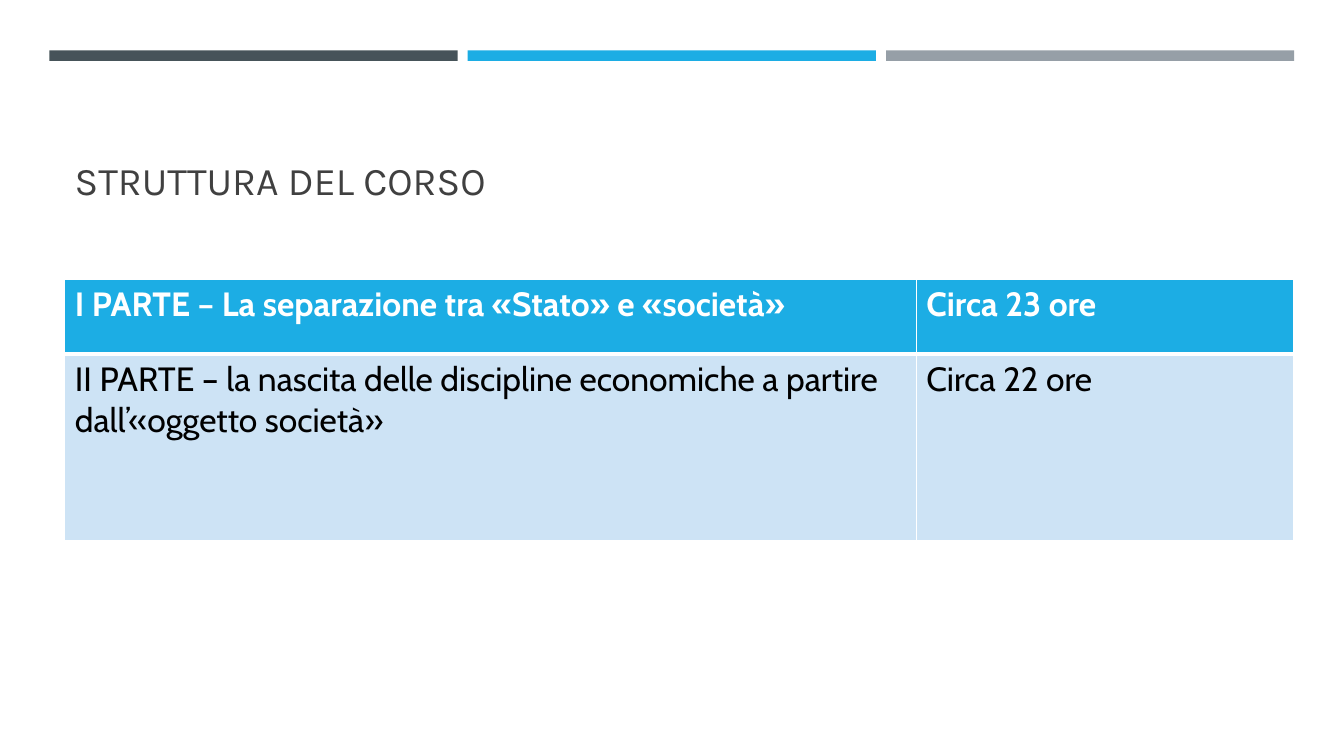
from dataclasses import dataclass

from lxml.etree import SubElement
from pptx import Presentation
from pptx.dml.color import RGBColor
from pptx.enum.shapes import MSO_SHAPE
from pptx.enum.text import MSO_ANCHOR
from pptx.oxml.ns import qn
from pptx.slide import Slide
from pptx.table import _Cell
from pptx.text.text import TextFrame
from pptx.util import Pt


@dataclass(frozen=True)
class Theme:
    slate: str = "465359"
    blue: str = "1CADE4"
    gray: str = "969FA7"
    pale_blue: str = "CDE3F5"
    white: str = "FFFFFF"
    black: str = "000000"
    title_color: str = "404040"
    title_font: str = "Karla"
    body_font: str = "Cabin"
    title_size: float = 28
    body_size: float = 24


@dataclass(frozen=True)
class TextStyle:
    font: str
    size: float
    color: str
    bold: bool = False


@dataclass(frozen=True)
class CourseRow:
    texts: tuple[str, str]
    height: float
    fill: str
    style: TextStyle
    top_border: float
    bottom_border: float


THEME = Theme()
BAR_LEFT, BAR_TOP, BAR_WIDTH, BAR_HEIGHT, BAR_PITCH = 35.3, 36, 291.6, 7.5, 298.8
BAR_COLORS = (THEME.slate, THEME.blue, THEME.gray)
CONTENT_LEFT = 46.3
TABLE_TOP = 199.6
COLUMN_WIDTHS = (608.2, 269.3)
TITLE_STYLE = TextStyle(THEME.title_font, THEME.title_size, THEME.title_color)
COURSE_ROWS = (
    CourseRow(
        ("I PARTE – La separazione tra «Stato» e «società»", "Circa 23 ore"),
        53.3,
        THEME.blue,
        TextStyle(THEME.body_font, THEME.body_size, THEME.white, True),
        1,
        3,
    ),
    CourseRow(
        (
            "II PARTE – la nascita delle discipline economiche a partire dall’«oggetto società»",
            "Circa 22 ore",
        ),
        133.2,
        THEME.pale_blue,
        TextStyle(THEME.body_font, THEME.body_size, THEME.black),
        3,
        1,
    ),
)


def write_text(frame: TextFrame, text: str, style: TextStyle) -> None:
    frame.word_wrap = True
    run = frame.paragraphs[0].add_run()
    run.text = text
    run.font.name = style.font
    run.font.size = Pt(style.size)
    run.font.bold = style.bold
    run.font.color.rgb = RGBColor.from_string(style.color)


def draw_bars(slide: Slide) -> None:
    for index, color in enumerate(BAR_COLORS):
        bar = slide.shapes.add_shape(
            MSO_SHAPE.RECTANGLE,
            Pt(BAR_LEFT + index * BAR_PITCH),
            Pt(BAR_TOP),
            Pt(BAR_WIDTH),
            Pt(BAR_HEIGHT),
        )
        bar.shadow.inherit = False
        bar.fill.solid()
        bar.fill.fore_color.rgb = RGBColor.from_string(color)
        bar.line.fill.background()


def draw_title(slide: Slide) -> None:
    title = slide.shapes.add_textbox(Pt(CONTENT_LEFT), Pt(55.4), Pt(868.3), Pt(93.6))
    title.text_frame.vertical_anchor = MSO_ANCHOR.BOTTOM
    write_text(title.text_frame, "STRUTTURA DEL CORSO", TITLE_STYLE)


def set_borders(cell: _Cell, top: float, bottom: float) -> None:
    properties = cell._tc.get_or_add_tcPr()
    widths = {"a:lnL": 1, "a:lnR": 1, "a:lnT": top, "a:lnB": bottom}
    for position, (tag, width) in enumerate(widths.items()):
        border = SubElement(properties, qn(tag), w=str(Pt(width)))
        fill = SubElement(border, qn("a:solidFill"))
        SubElement(fill, qn("a:srgbClr"), val=THEME.white)
        properties.insert(position, border)


def draw_course_table(slide: Slide) -> None:
    table = slide.shapes.add_table(
        len(COURSE_ROWS),
        len(COLUMN_WIDTHS),
        Pt(CONTENT_LEFT),
        Pt(TABLE_TOP),
        Pt(sum(COLUMN_WIDTHS)),
        Pt(sum(row.height for row in COURSE_ROWS)),
    ).table
    for column, width in zip(table.columns, COLUMN_WIDTHS):
        column.width = Pt(width)
    for table_row, course_row in zip(table.rows, COURSE_ROWS):
        table_row.height = Pt(course_row.height)
        for cell, text in zip(table_row.cells, course_row.texts):
            cell.fill.solid()
            cell.fill.fore_color.rgb = RGBColor.from_string(course_row.fill)
            set_borders(cell, course_row.top_border, course_row.bottom_border)
            write_text(cell.text_frame, text, course_row.style)


def main() -> None:
    presentation = Presentation()
    presentation.slide_width = Pt(960)
    presentation.slide_height = Pt(540)
    slide = presentation.slides.add_slide(presentation.slide_layouts[6])
    draw_bars(slide)
    draw_title(slide)
    draw_course_table(slide)
    presentation.save("out.pptx")


if __name__ == "__main__":
    main()
